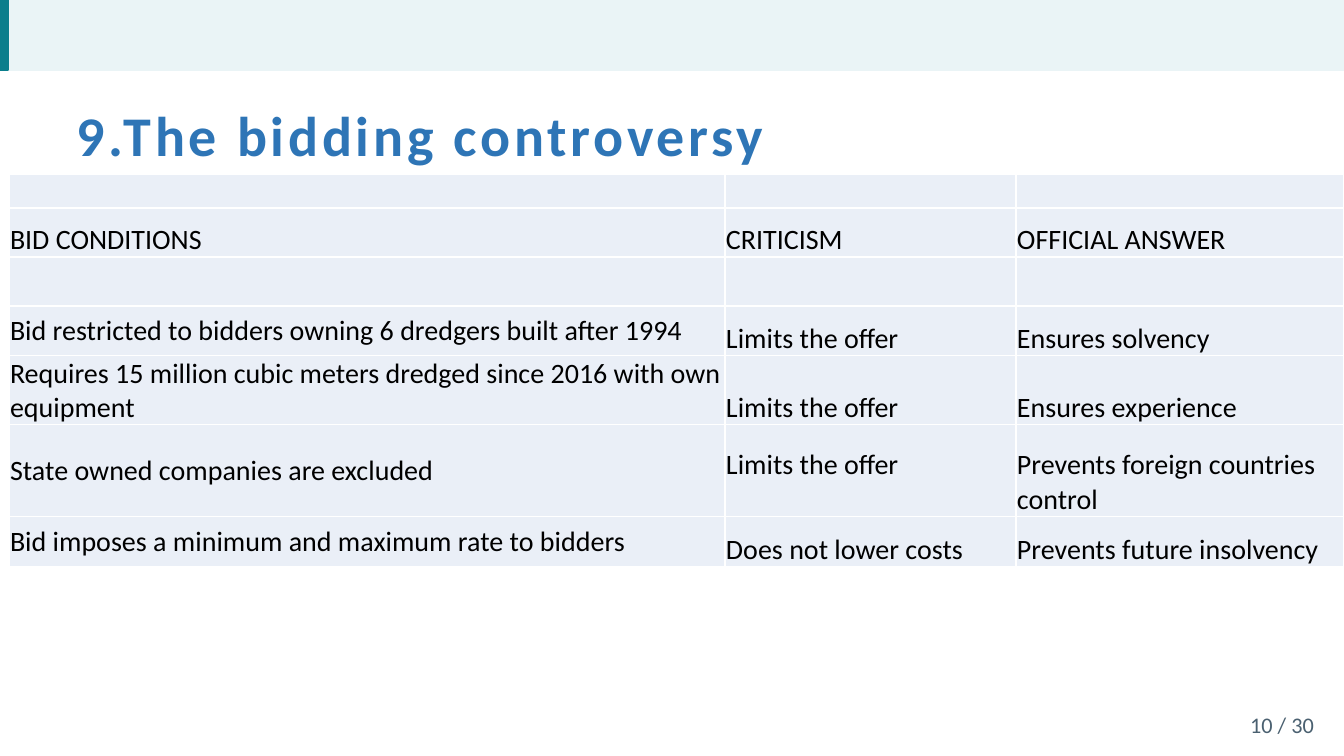
"""Build the slide on the bidding controversy."""
import pptx
import pptx.dml.color
import pptx.enum.shapes
import pptx.enum.text
import pptx.oxml
import pptx.oxml.ns
import pptx.util

PX = 914400 / 100.8
COLORS = {
    "band": "EAF4F6",
    "accent": "0A7E8C",
    "title": "2E75B6",
    "number": "4A6070",
    "cell": "EAEFF7",
    "border": "FFFFFF",
    "text": "000000",
}
ANCHOR = pptx.enum.text.MSO_ANCHOR
ALIGN = pptx.enum.text.PP_ALIGN


def px(*lengths):
    return [pptx.util.Emu(round(length * PX)) for length in lengths]


def write(frame, text, align, color, size, bold=False):
    paragraph = frame.paragraphs[0]
    paragraph.alignment = align
    run = paragraph.add_run()
    run.text = text
    run.font.color.rgb = pptx.dml.color.RGBColor.from_string(COLORS[color])
    formats = {"name": "Calibri", "size": pptx.util.Pt(size), "bold": bold}
    for key, value in formats.items():
        setattr(run.font, key, value)
    return run


deck = pptx.Presentation()
deck.slide_width, deck.slide_height = px(1344, 756)
slide = deck.slides.add_slide(deck.slide_layouts[6])

for width, color in [(1344, "band"), (8, "accent")]:
    header_bar = slide.shapes.add_shape(
        pptx.enum.shapes.MSO_SHAPE.RECTANGLE, *px(0, 0, width, 70))
    header_bar.shadow.inherit = False
    fill_color = pptx.dml.color.RGBColor.from_string(COLORS[color])
    header_bar.fill.solid()
    header_bar.fill.fore_color.rgb = fill_color
    header_bar.line.color.rgb = fill_color
    header_bar.line.width = pptx.util.Pt(1)

labels = [
    ((67, 87, 1210, 94), "9.The bidding controversy", ALIGN.LEFT, "title", 40, True, 270),
    ((1210, 706, 114, 37), "10 / 30", ALIGN.RIGHT, "number", 15.9, False, 0),
]
for place, text, align, color, size, bold, spacing in labels:
    label = slide.shapes.add_textbox(*px(*place)).text_frame
    label.word_wrap = True
    label.vertical_anchor = ANCHOR.MIDDLE
    label_run = write(label, text, align, color, size, bold)
    if spacing:
        label_run.font._element.set("spc", str(spacing))

bid_rows = [
    (34, ("", "", "")),
    (49, ("BID CONDITIONS", "CRITICISM", "OFFICIAL ANSWER")),
    (49, ("", "", "")),
    (50, ("Bid restricted to bidders owning 6 dredgers built after 1994",
          "Limits the offer", "Ensures solvency")),
    (69, ("Requires 15 million cubic meters dredged since 2016 with own equipment",
          "Limits the offer", "Ensures experience")),
    (92, ("State owned companies are excluded",
          "Limits the offer", "Prevents foreign countries control")),
    (50, ("Bid imposes a minimum and maximum rate to bidders",
          "Does not lower costs", "Prevents future insolvency")),
]
column_widths = [716, 291, 328]
table_height = sum(height for height, texts in bid_rows)
bids = slide.shapes.add_table(
    len(bid_rows), len(column_widths),
    *px(9, 174, sum(column_widths), table_height)).table
bids.first_row = False
bids.horz_banding = False
for column, width in zip(bids.columns, px(*column_widths)):
    column.width = width

for row_index, (height, texts) in enumerate(bid_rows):
    bids.rows[row_index].height = px(height)[0]
    for column_index, text in enumerate(texts):
        cell = bids.cell(row_index, column_index)
        condition = column_index == 0 and row_index > 2
        raised = (row_index, column_index) == (5, 1)
        left, right, top, bottom = px(1, 1, 1, 35 if raised else 0)
        formats = {
            "margin_left": left,
            "margin_right": right,
            "margin_top": top,
            "margin_bottom": bottom,
            "vertical_anchor": ANCHOR.MIDDLE if condition else ANCHOR.BOTTOM,
        }
        for key, value in formats.items():
            setattr(cell, key, value)
        cell_properties = cell._tc.get_or_add_tcPr()
        for side in ("lnL", "lnR", "lnT", "lnB"):
            cell_properties.append(pptx.oxml.parse_xml(
                f'<a:{side} {pptx.oxml.ns.nsdecls("a")} w="12700"><a:solidFill>'
                f'<a:srgbClr val="{COLORS["border"]}"/></a:solidFill></a:{side}>'))
        cell.fill.solid()
        cell.fill.fore_color.rgb = pptx.dml.color.RGBColor.from_string(COLORS["cell"])
        if text:
            write(cell.text_frame, text, ALIGN.LEFT, "text", 20)

deck.save("out.pptx")
